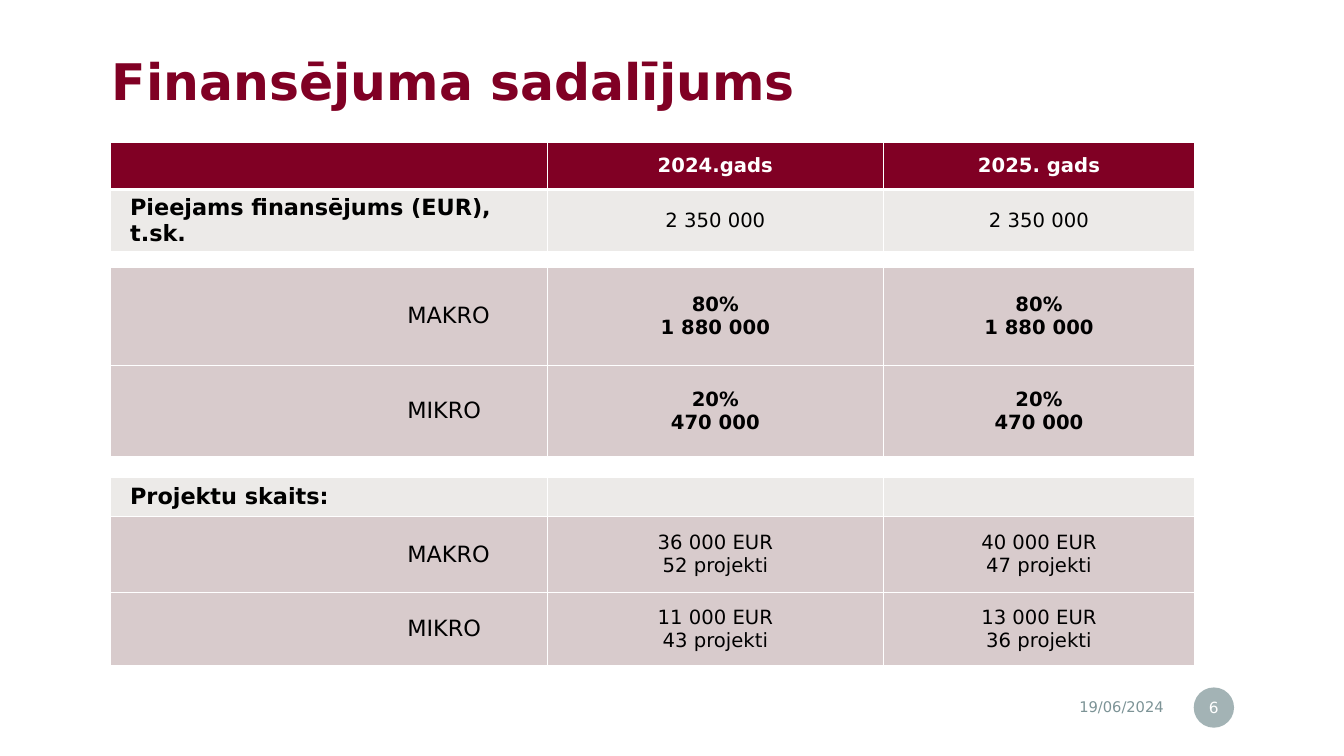
from dataclasses import dataclass

from lxml.etree import SubElement
from pptx import Presentation
from pptx.dml.color import RGBColor as RGB
from pptx.enum.shapes import MSO_SHAPE as SHAPE
from pptx.enum.text import MSO_ANCHOR as ANCHOR, PP_ALIGN as ALIGN
from pptx.oxml.ns import qn
from pptx.util import Inches, Pt


@dataclass(frozen=True)
class Theme:
    """Colours and type sizes of the deck."""
    font: str = "DejaVu Sans"
    wine: str = "800024"
    grey: str = "ECEAE8"
    rose: str = "D8CBCC"
    slate: str = "7C9396"
    white: str = "FFFFFF"
    black: str = "000000"
    title: float = 36
    label: float = 16
    value: float = 14
    number: float = 11
    date: float = 10.5
    spacer: float = 6


T = Theme()
COLUMNS = (40.33, 30.95, 28.72)
SPACER = ("", "", "")
ROWS = (
    (8.75, "header", ("", "2024.gads", "2025. gads")),
    (11.36, "group", ("Pieejams finansējums (EUR), t.sk.", "2 350 000", "2 350 000")),
    (2.98, "spacer", SPACER),
    (18.06, "share", ("MAKRO", "80%\n1 880 000", "80%\n1 880 000")),
    (16.95, "share", ("MIKRO", "20%\n470 000", "20%\n470 000")),
    (3.72, "spacer", SPACER),
    (7.26, "group", ("Projektu skaits:", "", "")),
    (14.15, "count", ("MAKRO", "36 000 EUR\n52 projekti", "40 000 EUR\n47 projekti")),
    (13.41, "count", ("MIKRO", "11 000 EUR\n43 projekti", "13 000 EUR\n36 projekti")),
    (3.35, "spacer", SPACER),
)
FILLS = {"header": T.wine, "group": T.grey, "share": T.rose,
         "count": T.rose, "spacer": T.white}


def share(length, percent):
    """Return a percentage of a length."""
    return int(length * percent / 100)


def area(prs, left, top, width, height):
    """Turn percentages of the slide into a box."""
    w, h = prs.slide_width, prs.slide_height
    return share(w, left), share(h, top), share(w, width), share(h, height)


def write(tf, text, size, color, bold=False, align=ALIGN.LEFT):
    """Fill a text frame with one paragraph per line."""
    tf.word_wrap = True
    tf.text = text
    for p in tf.paragraphs:
        p.alignment = align
        f = p.font
        f.name, f.size, f.bold = T.font, Pt(size), bold
        f.color.rgb = RGB.from_string(color)


def add_title(s, box, text):
    """Place the heading in its box."""
    tf = s.shapes.add_textbox(*box).text_frame
    write(tf, text, T.title, T.wine, bold=True)
    tf.margin_left = tf.margin_right = Inches(0.2)
    tf.margin_top = Inches(0.09)
    tf.paragraphs[0].line_spacing = 0.9


def add_borders(cell, top, bottom):
    """Draw white lines around a cell."""
    tc_pr = cell._tc.get_or_add_tcPr()
    for side, width in (("L", 1), ("R", 1), ("T", top), ("B", bottom)):
        ln = SubElement(tc_pr, qn(f"a:ln{side}"), w=str(Pt(width)))
        SubElement(SubElement(ln, qn("a:solidFill")), qn("a:srgbClr"), val=T.white)


def fill_cell(cell, kind, text, is_label, width):
    """Style one table cell and write its text."""
    cell.fill.solid()
    cell.fill.fore_color.rgb = RGB.from_string(FILLS[kind])
    cell.vertical_anchor = ANCHOR.MIDDLE
    cell.margin_left = cell.margin_right = 0
    cell.margin_top = cell.margin_bottom = Inches(0.04 if text and kind != "header" else 0)
    if not text:
        end = SubElement(cell.text_frame.paragraphs[0]._p, qn("a:endParaRPr"))
        end.set("sz", str(int(T.spacer * 100)))
    elif is_label:
        cell.margin_left = share(width, 1.86 if kind == "group" else 27.42)
        write(cell.text_frame, text, T.label, T.black, kind == "group")
    else:
        color = T.white if kind == "header" else T.black
        write(cell.text_frame, text, T.value, color, kind in ("header", "share"), ALIGN.CENTER)


def add_funding_table(s, box):
    """Build the funding table in its box."""
    width, height = box[2:]
    table = s.shapes.add_table(len(ROWS), len(COLUMNS), *box).table
    for col, percent in zip(table.columns, COLUMNS):
        col.width = share(width, percent)
    for i, (percent, kind, texts) in enumerate(ROWS):
        table.rows[i].height = share(height, percent)
        for j, text in enumerate(texts):
            cell = table.cell(i, j)
            add_borders(cell, 3 if i == 1 else 1, 3 if i == 0 else 1)
            fill_cell(cell, kind, text, j == 0, width)


def add_date(s, box, text):
    """Place the date at the right of its box."""
    tf = s.shapes.add_textbox(*box).text_frame
    write(tf, text, T.date, T.slate, align=ALIGN.RIGHT)
    tf.vertical_anchor = ANCHOR.MIDDLE


def add_page_number(s, box, text):
    """Draw the page number in a translucent circle."""
    sp = s.shapes.add_shape(SHAPE.OVAL, *box)
    sp.shadow.inherit = False
    sp.line.fill.background()
    sp.fill.solid()
    sp.fill.fore_color.rgb = RGB.from_string(T.slate)
    color = sp._element.spPr.find(qn("a:solidFill")).find(qn("a:srgbClr"))
    SubElement(color, qn("a:alpha"), val="70000")
    tf = sp.text_frame
    write(tf, text, T.number, T.white, align=ALIGN.CENTER)
    tf.margin_left = tf.margin_right = Inches(0.02)
    tf.vertical_anchor = ANCHOR.MIDDLE


def main():
    """Build and save the slide."""
    prs = Presentation()
    prs.slide_width, prs.slide_height = Inches(13.33), Inches(7.5)
    s = prs.slides.add_slide(prs.slide_layouts[6])
    add_title(s, area(prs, 6.83, 6.4, 65.49, 16.4), "Finansējuma sadalījums")
    add_date(s, area(prs, 64.74, 91.2, 22.58, 4.67), "19/06/2024")
    add_page_number(s, area(prs, 88.82, 90.93, 3, 5.33), "6")
    add_funding_table(s, area(prs, 8.18, 18.8, 80.72, 71.6))
    prs.save("out.pptx")


if __name__ == "__main__":
    main()
